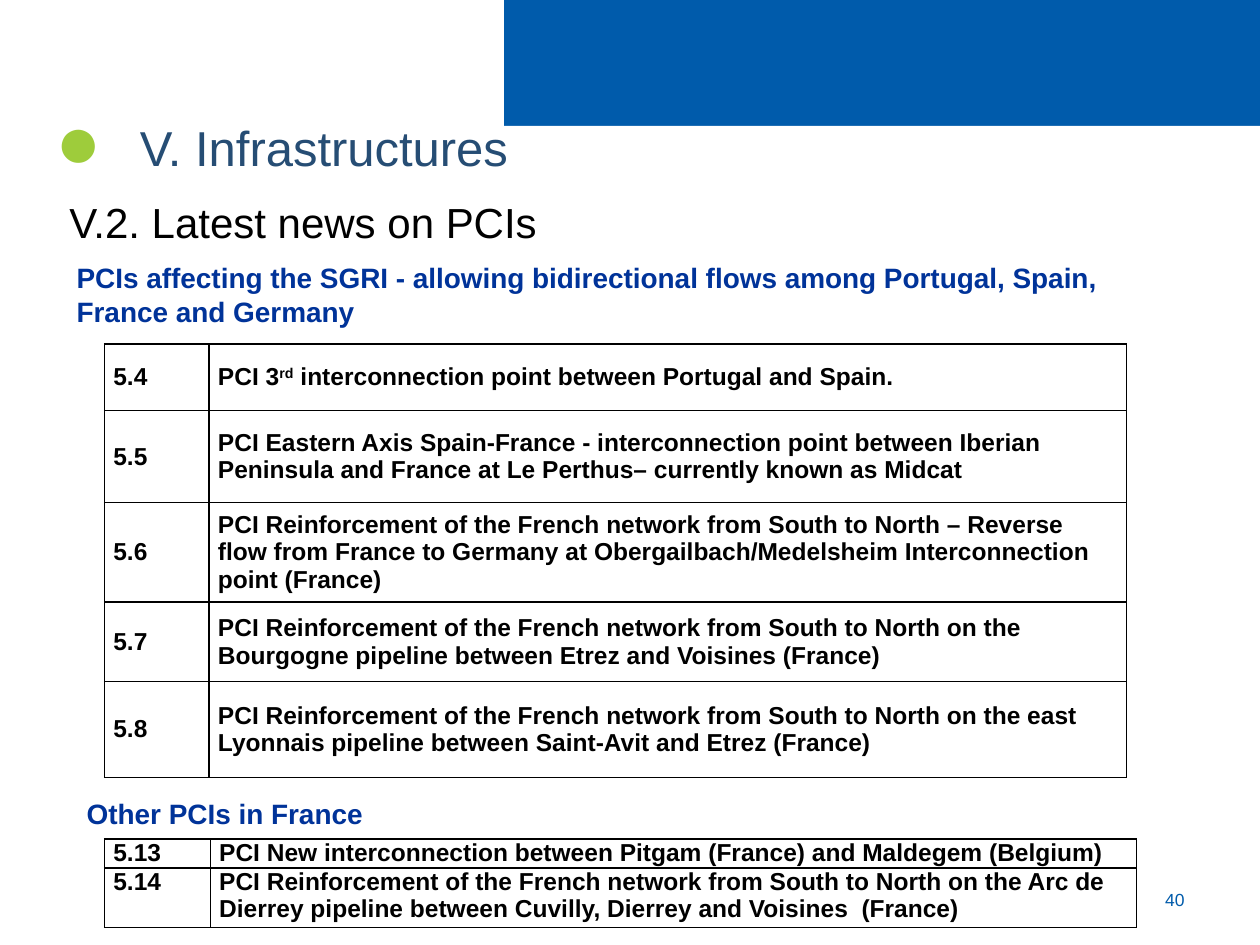
"""Build the slide on infrastructure projects of common interest."""
from dataclasses import dataclass

from lxml import etree
from pptx import Presentation
from pptx.dml.color import RGBColor
from pptx.enum.shapes import MSO_SHAPE
from pptx.enum.text import MSO_ANCHOR, MSO_AUTO_SIZE, PP_ALIGN
from pptx.oxml.ns import qn
from pptx.util import Inches, Pt

FONT = "Arial"
BLUE, WHITE, BLACK = "005BAB", "FFFFFF", "000000"
NAVY, GREEN, HEADING = "264D74", "9ECC3B", "003399"
LEFT, CENTER, RIGHT = PP_ALIGN.LEFT, PP_ALIGN.CENTER, PP_ALIGN.RIGHT
TOP, MIDDLE, BOTTOM = MSO_ANCHOR.TOP, MSO_ANCHOR.MIDDLE, MSO_ANCHOR.BOTTOM
RECTANGLE = MSO_SHAPE.RECTANGLE
NO_AUTOFIT = MSO_AUTO_SIZE.NONE
CURVE_STEPS = 60

Point = tuple[float, float]


@dataclass
class Label:
    text: str
    box: tuple[float, float, float, float]
    size: float
    color: str
    bold: bool = False
    align: PP_ALIGN = LEFT
    anchor: MSO_ANCHOR = TOP
    inset: float = 0.1
    spacing: float = 1.0


@dataclass
class Row:
    code: str
    runs: list[str]
    height: float


@dataclass
class ProjectTable:
    left: float
    top: float
    widths: tuple[float, float]
    anchor: MSO_ANCHOR
    rows: list[Row]


TITLE = Label("V. Infrastructures", (0.91, 0.88, 8.75, 0.57), 28, NAVY, inset=0.2)
LABELS = [
    Label("40", (8.94, 6.94, 0.56, 0.4), 10, BLUE, align=RIGHT, anchor=MIDDLE),
    Label("●", (0.35, 0.57, 0.55, 0.94), 44, GREEN, align=CENTER, anchor=BOTTOM, inset=0),
    Label("V.2. Latest news on PCIs", (0.35, 1.43, 4.57, 0.59), 24, BLACK,
          inset=0.2, spacing=1.2),
    Label("PCIs affecting the SGRI - allowing bidirectional flows among Portugal, Spain, "
          "France and Germany", (0.51, 2.02, 8.66, 0.64), 16, HEADING, True),
    Label("Other PCIs in France", (0.59, 6.27, 8.66, 0.37), 16, HEADING, True),
]
REINFORCEMENT = "PCI Reinforcement of the French network from South to North"
TABLES = [
    ProjectTable(0.83, 2.73, (0.83, 7.28), MIDDLE, [
        Row("5.4", ["PCI 3", "rd", " interconnection point between Portugal and Spain."], 0.53),
        Row("5.5", ["PCI Eastern Axis Spain-France - interconnection point between Iberian "
                    "Peninsula and France at Le Perthus– currently known as Midcat"], 0.73),
        Row("5.6", [f"{REINFORCEMENT} – Reverse flow from France to Germany at "
                    "Obergailbach/Medelsheim Interconnection point (France)"], 0.79),
        Row("5.7", [f"{REINFORCEMENT} on the Bourgogne pipeline between Etrez and "
                    "Voisines (France)"], 0.63),
        Row("5.8", [f"{REINFORCEMENT} on the east Lyonnais pipeline between Saint-Avit "
                    "and Etrez (France)"], 0.76),
    ]),
    ProjectTable(0.83, 6.66, (0.84, 7.35), TOP, [
        Row("5.13", ["PCI New interconnection between Pitgam (France) and Maldegem (Belgium)"],
            0.23),
        Row("5.14", [f"{REINFORCEMENT} on the Arc de Dierrey pipeline between Cuvilly, "
                     "Dierrey and Voisines  (France)"], 0.47),
    ]),
]


def rgb(color: str) -> RGBColor:
    """Turn a hex string into a colour."""
    return RGBColor.from_string(color)


def paint(sp, color: str) -> None:
    """Give a shape a plain fill without outline or shadow."""
    sp.shadow.inherit = False
    sp.fill.solid()
    sp.fill.fore_color.rgb = rgb(color)
    sp.line.fill.background()


def add_run(p, text: str, size: float, color: str, bold: bool):
    """Append a formatted run to a paragraph."""
    r = p.add_run()
    r.text = text
    r.font.name, r.font.size, r.font.bold = FONT, Pt(size), bold
    r.font.color.rgb = rgb(color)
    return r


def fill_label(sp, label: Label) -> None:
    """Place a text shape and write its label."""
    sp.left, sp.top, sp.width, sp.height = map(Inches, label.box)
    tf = sp.text_frame
    tf.word_wrap, tf.auto_size = True, NO_AUTOFIT
    tf.vertical_anchor = label.anchor
    tf.margin_left = Inches(label.inset)
    tf.margin_right = Inches(min(label.inset, 0.1))
    p = tf.paragraphs[0]
    p.alignment, p.line_spacing = label.align, label.spacing
    add_run(p, label.text, label.size, label.color, label.bold)


def bezier(a: Point, b: Point, c: Point, d: Point) -> list[Point]:
    """Sample a cubic curve, leaving out its first point."""
    points = []
    for i in range(1, CURVE_STEPS + 1):
        t = i / CURVE_STEPS
        weights = ((1 - t) ** 3, 3 * t * (1 - t) ** 2, 3 * t * t * (1 - t), t ** 3)
        x, y = (sum(w * v for w, v in zip(weights, axis)) for axis in zip(a, b, c, d))
        points.append((x, y))
    return points


def add_wave(s) -> None:
    """Draw the blue band and the white wave that cuts into it."""
    band = s.shapes.add_shape(RECTANGLE, 0, 0, Inches(10), Inches(1.15))
    paint(band, BLUE)
    start, crest, end = (0, 1.1), (1.31, 0.21), (10, 0.61)
    points = bezier(start, (0.03, 0.8), (0.23, 0.21), crest)
    points += bezier(crest, (2.76, 0.21), (5.1, 0.94), end)
    points += [(10, 3.92), (0, 3.92)]
    builder = s.shapes.build_freeform(*start, scale=Inches(1))
    builder.add_line_segments(points, close=True)
    paint(builder.convert_to_shape(), WHITE)


def add_borders(cell) -> None:
    """Draw a thin black line on each side of a cell."""
    tc_pr = cell._tc.get_or_add_tcPr()
    for i, side in enumerate(("a:lnL", "a:lnR", "a:lnT", "a:lnB")):
        ln = etree.Element(qn(side), w=str(Pt(1)))
        fill = etree.SubElement(ln, qn("a:solidFill"))
        etree.SubElement(fill, qn("a:srgbClr"), val=BLACK)
        tc_pr.insert(i, ln)


def fill_cell(cell, runs: list[str], anchor: MSO_ANCHOR) -> None:
    """Write and format one table cell."""
    cell.fill.background()
    cell.vertical_anchor = anchor
    cell.margin_left = cell.margin_right = Inches(0.07)
    cell.margin_top = cell.margin_bottom = 0
    p = cell.text_frame.paragraphs[0]
    for text in runs:
        r = add_run(p, text, 14, BLACK, True)
        if text == "rd":
            r._r.get_or_add_rPr().set("baseline", "30000")
    add_borders(cell)


def add_project_table(s, spec_table: ProjectTable) -> None:
    """Draw a table of project codes and descriptions."""
    rows, widths = spec_table.rows, spec_table.widths
    table = s.shapes.add_table(
        len(rows), len(widths), Inches(spec_table.left), Inches(spec_table.top),
        Inches(sum(widths)), Inches(sum(row.height for row in rows))).table
    table.first_row = table.horz_banding = False
    for column, width in zip(table.columns, widths):
        column.width = Inches(width)
    for i, row in enumerate(rows):
        table.rows[i].height = Inches(row.height)
        fill_cell(table.cell(i, 0), [row.code], spec_table.anchor)
        fill_cell(table.cell(i, 1), row.runs, spec_table.anchor)


def main() -> None:
    """Build and save the slide."""
    prs = Presentation()
    prs.slide_width, prs.slide_height = Inches(10), Inches(7.5)
    s = prs.slides.add_slide(prs.slide_layouts[5])
    add_wave(s)
    title = s.shapes.title
    s.shapes._spTree.append(title._element)
    fill_label(title, TITLE)
    for label in LABELS:
        fill_label(s.shapes.add_textbox(0, 0, 0, 0), label)
    for project_table in TABLES:
        add_project_table(s, project_table)
    prs.save("out.pptx")


if __name__ == "__main__":
    main()
